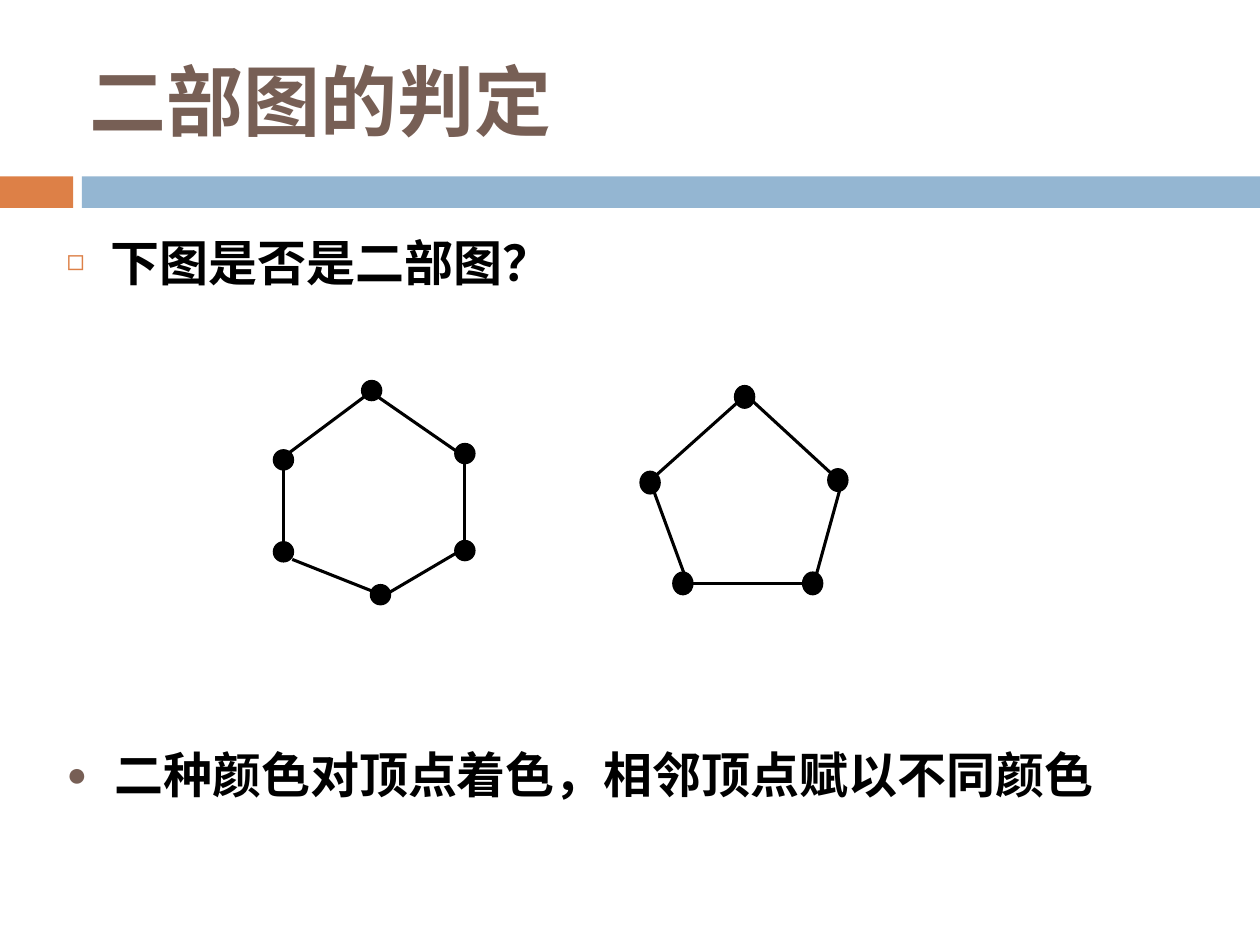
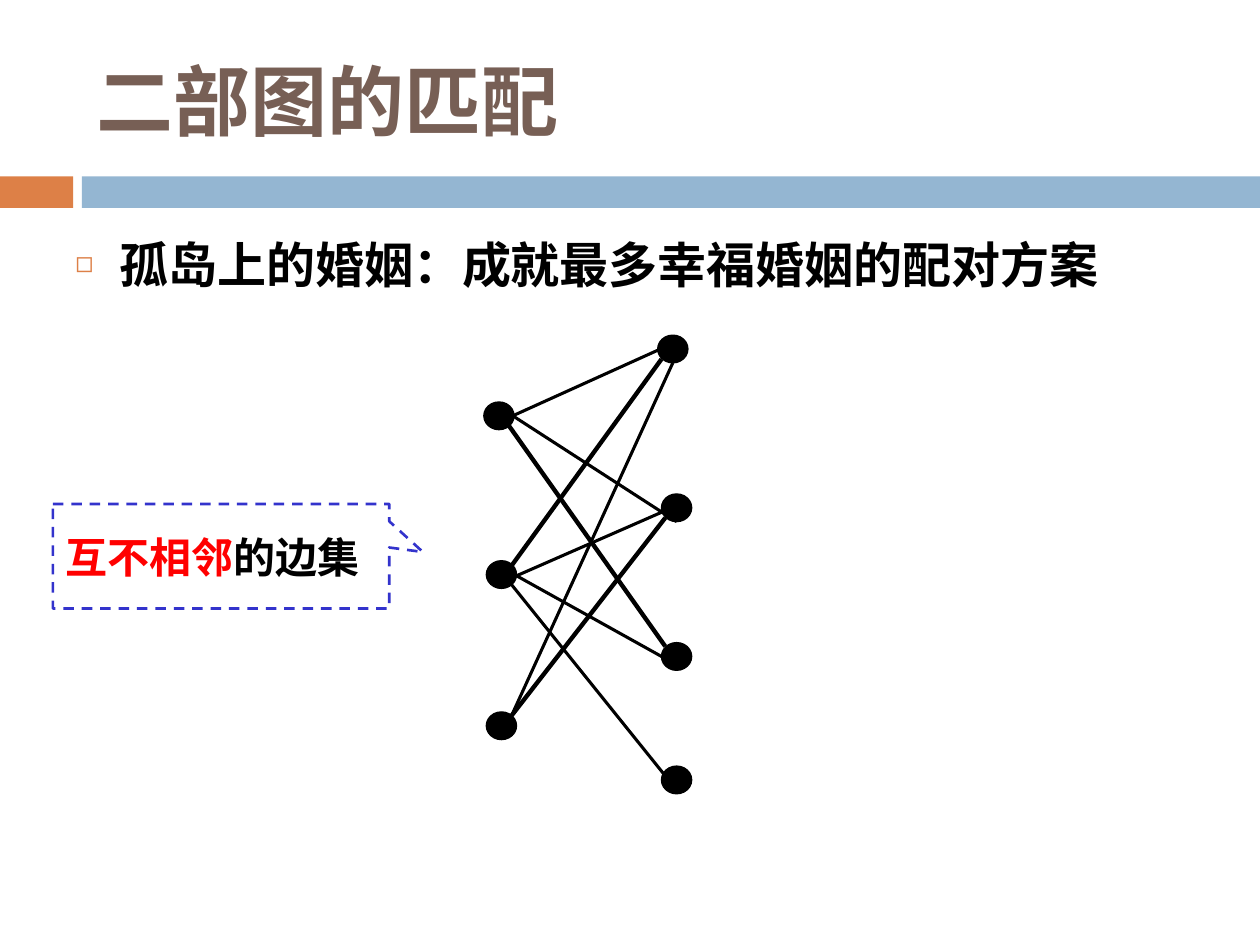
from lxml import etree
from pptx import Presentation
from pptx.dml.color import RGBColor
from pptx.enum import dml, shapes, text
from pptx.oxml import ns
from pptx.util import Inches, Pt

ORANGE = RGBColor(0xDD, 0x80, 0x47)
BLUE = RGBColor(0x94, 0xB6, 0xD2)
BROWN = RGBColor(0x77, 0x5F, 0x55)
BLACK = RGBColor(0, 0, 0)
RED = RGBColor(0xFF, 0, 0)
INDIGO = RGBColor(0x33, 0x33, 0xCC)

SERIF = "Times New Roman"
SANS = "Cabin"
THIN, THICK = 1.75, 2.5
SQUARE_BULLET = ("◻", ORANGE, 60)
ROUND_BULLET = ("●", BROWN, 70)

# Dots are centre points; edges are pairs of end points.
HEXAGON_DOTS = [(2.95, 3.1), (3.69, 3.6), (3.69, 4.37), (3.02, 4.72), (2.25, 4.38), (2.25, 3.65)]
HEXAGON_EDGES = [
    ((3, 3.15), (3.65, 3.6)), ((3.69, 3.66), (3.69, 4.29)), ((3.74, 4.32), (3.06, 4.72)),
    ((2.95, 4.69), (2.32, 4.44)), ((2.25, 4.3), (2.25, 3.67)), ((2.3, 3.59), (2.89, 3.15)),
]
PENTAGON_DOTS = [(5.91, 3.15), (6.65, 3.81), (6.45, 4.63), (5.42, 4.63), (5.16, 3.83)]
PENTAGON_EDGES = [
    ((5.97, 3.18), (6.6, 3.76)), ((6.67, 3.87), (6.46, 4.63)), ((6.37, 4.63), (5.5, 4.63)),
    ((5.48, 4.69), (5.19, 3.9)), ((5.21, 3.77), (5.97, 3.09)),
]
LEFT_DOTS = [(3.96, 3.3), (3.98, 4.56), (3.98, 5.76)]
RIGHT_DOTS = [(5.34, 2.77), (5.37, 4.03), (5.37, 5.21), (5.37, 6.19)]
OTHER_EDGES = [
    ((4.07, 3.3), (5.22, 2.78)), ((4.07, 3.3), (5.37, 4.14)), ((4.1, 4.57), (5.31, 4.04)),
    ((4.1, 4.57), (5.25, 5.21)), ((4.06, 4.64), (5.29, 6.17)), ((4.06, 5.68), (5.34, 2.88)),
]
MATCHED_EDGES = [
    ((4.04, 3.38), (5.28, 5.13)), ((4.06, 4.49), (5.25, 2.85)), ((4.06, 5.68), (5.28, 4.11)),
]


def write_text(shape, runs, size, anchor=text.MSO_ANCHOR.TOP, align=text.PP_ALIGN.LEFT,
               before=0, spacing=1.0, bullet=None, indent=0):
    """Fill a shape with one bold paragraph; runs are (words, font, colour)."""
    frame = shape.text_frame
    frame.word_wrap = True
    frame.vertical_anchor = anchor
    paragraph = frame.paragraphs[0]
    paragraph.alignment = align
    paragraph.space_before = Pt(before)
    paragraph.line_spacing = spacing
    for words, font, colour in runs:
        run = paragraph.add_run()
        run.text = words
        run.font.name = font
        run.font.size = Pt(size)
        run.font.bold = True
        run.font.color.rgb = colour
    if bullet:
        add_bullet(paragraph, bullet, indent)


def add_bullet(paragraph, bullet, indent):
    character, colour, percent = bullet
    properties = paragraph._p.get_or_add_pPr()
    properties.set("marL", str(Inches(indent)))
    properties.set("indent", str(-Inches(indent)))
    colour_element = etree.SubElement(properties, ns.qn("a:buClr"))
    etree.SubElement(colour_element, ns.qn("a:srgbClr"), val=str(colour))
    etree.SubElement(properties, ns.qn("a:buSzPct"), val=str(percent * 1000))
    etree.SubElement(properties, ns.qn("a:buFont"), typeface="Arial")
    etree.SubElement(properties, ns.qn("a:buChar"), char=character)


class Deck:
    def __init__(self):
        self.presentation = Presentation()
        self.presentation.slide_width = Inches(10)
        self.presentation.slide_height = Inches(7.5)
        self.slide = None

    def new_slide(self, title, font, box):
        """Start a slide with the two bands and its title."""
        self.slide = self.presentation.slides.add_slide(self.presentation.slide_layouts[6])
        self.shape(shapes.MSO_SHAPE.RECTANGLE, (0, 1.4, 0.58, 0.25), ORANGE)
        self.shape(shapes.MSO_SHAPE.RECTANGLE, (0.65, 1.4, 9.35, 0.25), BLUE)
        self.text(box, [(title, font, BROWN)], size=44, anchor=text.MSO_ANCHOR.MIDDLE)

    def shape(self, kind, box, fill=None, line=None, width=0.75):
        shape = self.slide.shapes.add_shape(kind, *map(Inches, box))
        shape.shadow.inherit = False
        if fill is None:
            shape.fill.background()
        else:
            shape.fill.solid()
            shape.fill.fore_color.rgb = fill
        if line is None:
            shape.line.fill.background()
        else:
            shape.line.color.rgb = line
            shape.line.width = Pt(width)
        return shape

    def text(self, box, runs, **style):
        write_text(self.slide.shapes.add_textbox(*map(Inches, box)), runs, **style)

    def callout(self, box, tip, runs):
        callout = self.shape(shapes.MSO_SHAPE.RECTANGULAR_CALLOUT, box, line=INDIGO, width=1.5)
        callout.line.dash_style = dml.MSO_LINE.DASH
        callout.adjustments[0], callout.adjustments[1] = tip
        write_text(callout, runs, size=24, anchor=text.MSO_ANCHOR.MIDDLE)

    def dots(self, centres, width, height):
        for x, y in centres:
            box = (x - width / 2, y - height / 2, width, height)
            self.shape(shapes.MSO_SHAPE.FLOWCHART_CONNECTOR, box, BLACK, BLACK)

    def edges(self, pairs, width=THIN):
        for start, end in pairs:
            edge = self.slide.shapes.add_connector(
                shapes.MSO_CONNECTOR.STRAIGHT, *map(Inches, start + end))
            edge.line.color.rgb = BLACK
            edge.line.width = Pt(width)
            etree.SubElement(edge._element.spPr, ns.qn("a:effectLst"))


def add_test_slide(deck):
    deck.new_slide("二部图的判定", SERIF, (0.61, 0.36, 8.25, 0.87))
    body = dict(size=28, align=text.PP_ALIGN.JUSTIFY, spacing=1.2)
    deck.text((0.43, 1.7, 9.29, 0.71), [("下图是否是二部图？", SERIF, BLACK)],
              before=7, bullet=SQUARE_BULLET, indent=0.35, **body)
    deck.edges(HEXAGON_EDGES + PENTAGON_EDGES)
    deck.dots(HEXAGON_DOTS, 0.16, 0.16)
    deck.dots(PENTAGON_DOTS, 0.16, 0.18)
    deck.text((0.43, 5.77, 9.29, 0.79),
              [("二种颜色对顶点着色，相邻顶点赋以不同颜色", SERIF, BLACK)],
              before=5.6, bullet=ROUND_BULLET, indent=0.38, **body)


def add_matching_slide(deck):
    deck.new_slide("二部图的匹配", SANS, (0.67, 0.25, 8.92, 1.08))
    deck.text((0.5, 1.81, 9.25, 0.83),
              [("孤岛上的婚姻：", SANS, BLACK), ("成就最多幸福婚姻的配对方案", "Arial", BLACK)],
              size=28, before=7, bullet=SQUARE_BULLET, indent=0.35)
    deck.callout((0.42, 4, 2.67, 0.83), (0.6, -0.04),
                 [("互不相邻", SANS, RED), ("的边集", SANS, BLACK)])
    deck.edges(OTHER_EDGES)
    deck.edges(MATCHED_EDGES, THICK)
    deck.dots(LEFT_DOTS + RIGHT_DOTS, 0.24, 0.22)


def main():
    deck = Deck()
    add_test_slide(deck)
    add_matching_slide(deck)
    deck.presentation.save("out.pptx")


if __name__ == "__main__":
    main()
